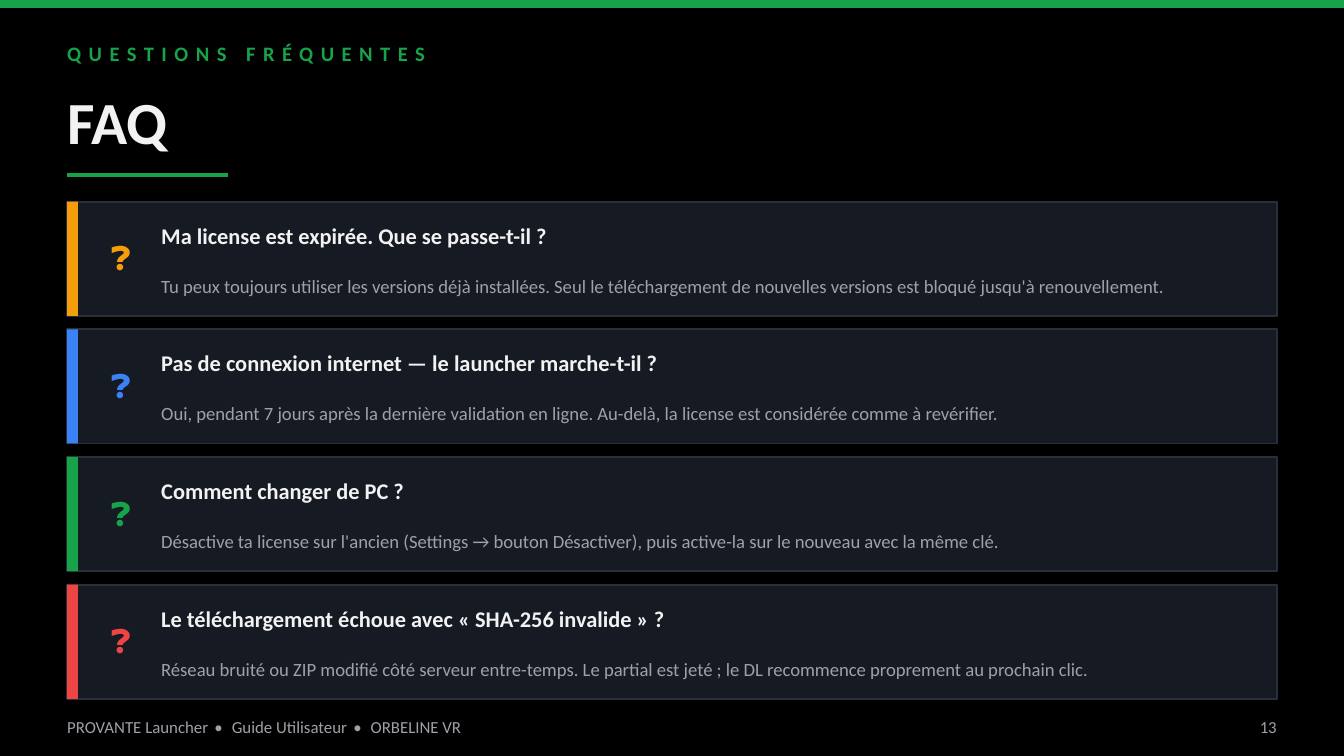
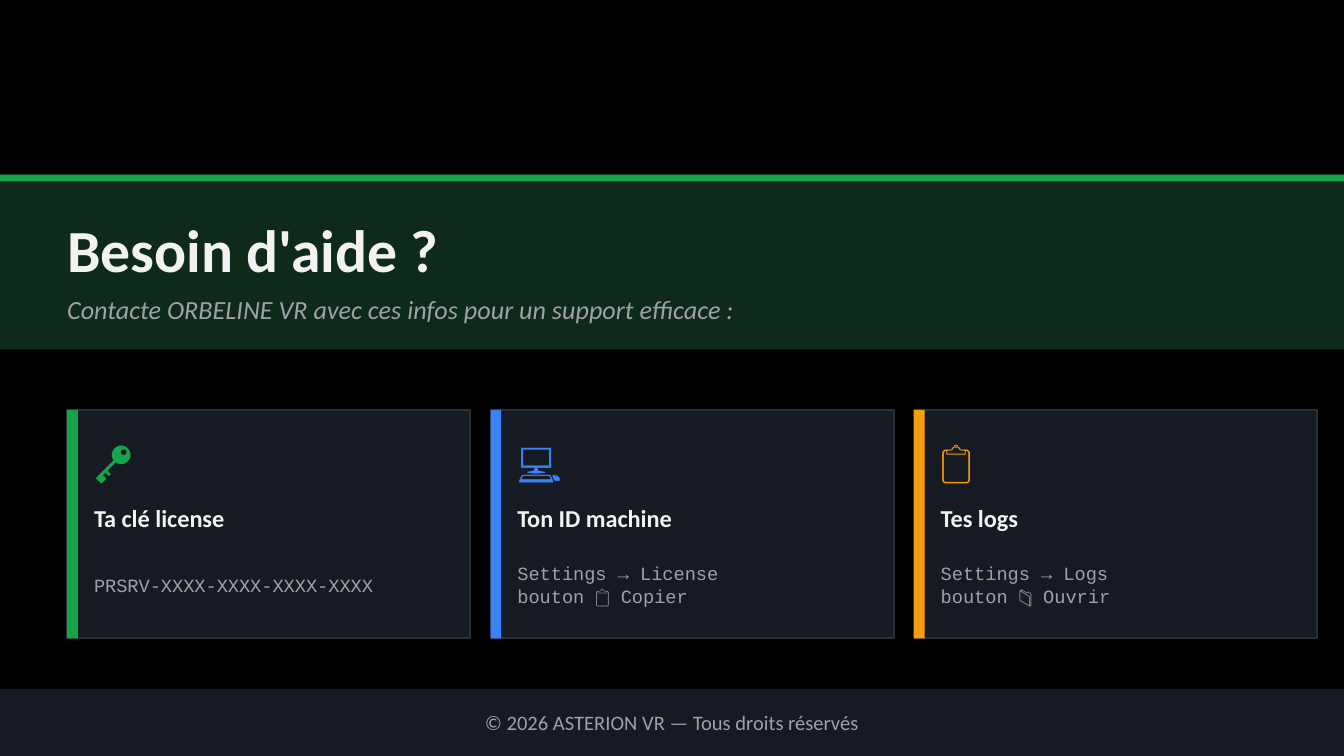
"""Builds the FAQ and help slides of a launcher user guide."""
from lxml import etree
from pptx import Presentation
from pptx import util as u
from pptx.dml.color import RGBColor
from pptx.enum import shapes, text
from pptx.oxml.ns import qn

HUES = {
    "back": "000000", "card": "161B23", "edge": "2A2F3A", "band": "0E2A1B",
    "text": "F2F2F2", "mute": "A0A0A8", "green": "16A34A", "blue": "3B82F6",
    "amber": "F59E0B", "red": "EF4444",
}
WIDTH = u.Inches(10)
HEIGHT = WIDTH * 9 // 16
CELL = WIDTH // 100
LEFT, SPAN = 5, 90
DOT = " • "
ALIGN = {"l": text.PP_ALIGN.LEFT, "c": text.PP_ALIGN.CENTER, "r": text.PP_ALIGN.RIGHT}

FAQ = [
    ("amber", "Ma license est expirée. Que se passe-t-il ?",
     "Tu peux toujours utiliser les versions déjà installées. "
     "Seul le téléchargement de nouvelles versions est bloqué jusqu'à renouvellement."),
    ("blue", "Pas de connexion internet — le launcher marche-t-il ?",
     "Oui, pendant 7 jours après la dernière validation en ligne. "
     "Au-delà, la license est considérée comme à revérifier."),
    ("green", "Comment changer de PC ?",
     "Désactive ta license sur l'ancien (Settings → bouton Désactiver), "
     "puis active-la sur le nouveau avec la même clé."),
    ("red", "Le téléchargement échoue avec « SHA-256 invalide » ?",
     "Réseau bruité ou ZIP modifié côté serveur entre-temps. "
     "Le partial est jeté ; le DL recommence proprement au prochain clic."),
]
HELP = [
    ("green", "🔑", "Ta clé license", "PRSRV-XXXX-XXXX-XXXX-XXXX"),
    ("blue", "💻", "Ton ID machine", "Settings → License\nbouton 📋 Copier"),
    ("amber", "📋", "Tes logs", "Settings → Logs\nbouton 📁 Ouvrir"),
]


def grid(*cells):
    """Turn grid columns and rows into lengths."""
    return [u.Emu(round(n * CELL)) for n in cells]


def tint(name):
    """Look up a named colour."""
    return RGBColor.from_string(HUES[name])


def write(frame, words, size=10, hue="mute", font="Calibri", bold=False,
          slant=False, align="l", track=0):
    """Fill a text frame, one paragraph to each line, with dots spaced wider."""
    frame.word_wrap = True
    frame.vertical_anchor = text.MSO_ANCHOR.MIDDLE
    frame.margin_left = frame.margin_right = frame.margin_top = frame.margin_bottom = 0
    for i, line in enumerate(words.split("\n")):
        para = frame.add_paragraph() if i else frame.paragraphs[0]
        para.alignment = ALIGN[align]
        for bit in line.replace(DOT, f"\n{DOT}\n").split("\n"):
            run = para.add_run()
            run.text = bit
            face = run.font
            face.name, face.size, face.color.rgb = font, u.Pt(size), tint(hue)
            face.bold, face.italic = bold, slant
            space = 1.4 if bit == DOT else track
            if space:
                run._r.get_or_add_rPr().set("spc", str(round(space * 100)))


class Deck:
    """Holds the shared style and the current slide."""

    def __init__(self):
        """Start an empty deck."""
        self.file = Presentation()
        self.file.slide_width, self.file.slide_height = WIDTH, HEIGHT
        self.slide = None

    def page(self):
        """Add a dark slide and make it current."""
        self.slide = self.file.slides.add_slide(self.file.slide_layouts[6])
        fill = self.slide.background.fill
        fill.solid()
        fill.fore_color.rgb = tint("back")

    def rect(self, x, y, w, h, hue, edge=None):
        """Draw a flat rectangle."""
        box = self.slide.shapes.add_shape(shapes.MSO_SHAPE.RECTANGLE, *grid(x, y, w, h))
        box.shadow.inherit = False
        box.fill.solid()
        box.fill.fore_color.rgb = tint(hue)
        if edge:
            box.line.color.rgb, box.line.width = tint(edge), u.Pt(1)
        else:
            box.line.fill.background()

    def label(self, x, y, w, h, words, **style):
        """Place a text box."""
        write(self.slide.shapes.add_textbox(*grid(x, y, w, h)).text_frame, words, **style)

    def rule(self, x, y, w):
        """Draw a level accent line."""
        line = self.slide.shapes.add_connector(
            shapes.MSO_CONNECTOR.STRAIGHT, *grid(x, y, x + w, y))
        line.line.color.rgb, line.line.width = tint("green"), u.Pt(2)
        etree.SubElement(line._element.spPr, qn("a:effectLst"))

    def title(self, y, h, words):
        """Write the slide title."""
        self.label(LEFT, y, SPAN, h, words, size=32, hue="text", bold=True)

    def card(self, x, y, w, h, hue):
        """Draw a card with a coloured left edge."""
        self.rect(x, y, w, h, "card", "edge")
        self.rect(x, y, 0.8, h, hue)

    def foot(self, num):
        """Write the guide name and page number."""
        self.label(LEFT, 52.8, 80, 2.5,
                   DOT.join(["PROVANTE Launcher", "Guide Utilisateur", "ORBELINE VR"]),
                   size=9)
        self.label(90, 52.8, 5, 2.5, str(num), size=9, align="r")


def faq(deck):
    """Build the questions slide."""
    deck.page()
    deck.rect(0, 0, 100, 0.6, "green")
    deck.label(LEFT, 2.5, SPAN, 3, "QUESTIONS FRÉQUENTES",
               size=11, hue="green", bold=True, track=4)
    deck.title(5.5, 7, "FAQ")
    deck.rule(LEFT, 13, 12)
    deck.foot(13)
    for i, (hue, ask, reply) in enumerate(FAQ):
        y = 15 + 9.5 * i
        deck.card(LEFT, y, SPAN, 8.5, hue)
        deck.label(7, y + 1.8, 4, 4.5, "❓", size=16, hue=hue, align="c")
        deck.label(12, y + 1, 83, 3, ask, size=12, hue="text", bold=True)
        deck.label(12, y + 4, 83, 4.5, reply)


def help_page(deck):
    """Build the support slide."""
    deck.page()
    deck.rect(0, 13, 100, 13, "band")
    deck.rect(0, 13, 100, 0.5, "green")
    deck.title(15.5, 6, "Besoin d'aide ?")
    deck.label(LEFT, 21, SPAN, 4,
               "Contacte ORBELINE VR avec ces infos pour un support efficace :",
               size=14, slant=True)
    for i, (hue, icon, name, hint) in enumerate(HELP):
        x = LEFT + 31.5 * i
        deck.card(x, 30.5, 30, 17, hue)
        deck.label(x + 2, 32, 26, 4.5, icon, size=22, hue=hue)
        deck.label(x + 2, 37, 26, 3, name, size=13, hue="text", bold=True)
        deck.label(x + 2, 40, 26, 7, hint, font="Courier New")
    deck.rect(0, 51.25, 100, 5, "card")
    deck.label(LEFT, 51.75, SPAN, 4, "© 2026 ASTERION VR — Tous droits réservés",
               size=11, align="c")


def main():
    """Build and save both slides."""
    deck = Deck()
    faq(deck)
    help_page(deck)
    deck.file.save("out.pptx")


if __name__ == "__main__":
    main()
